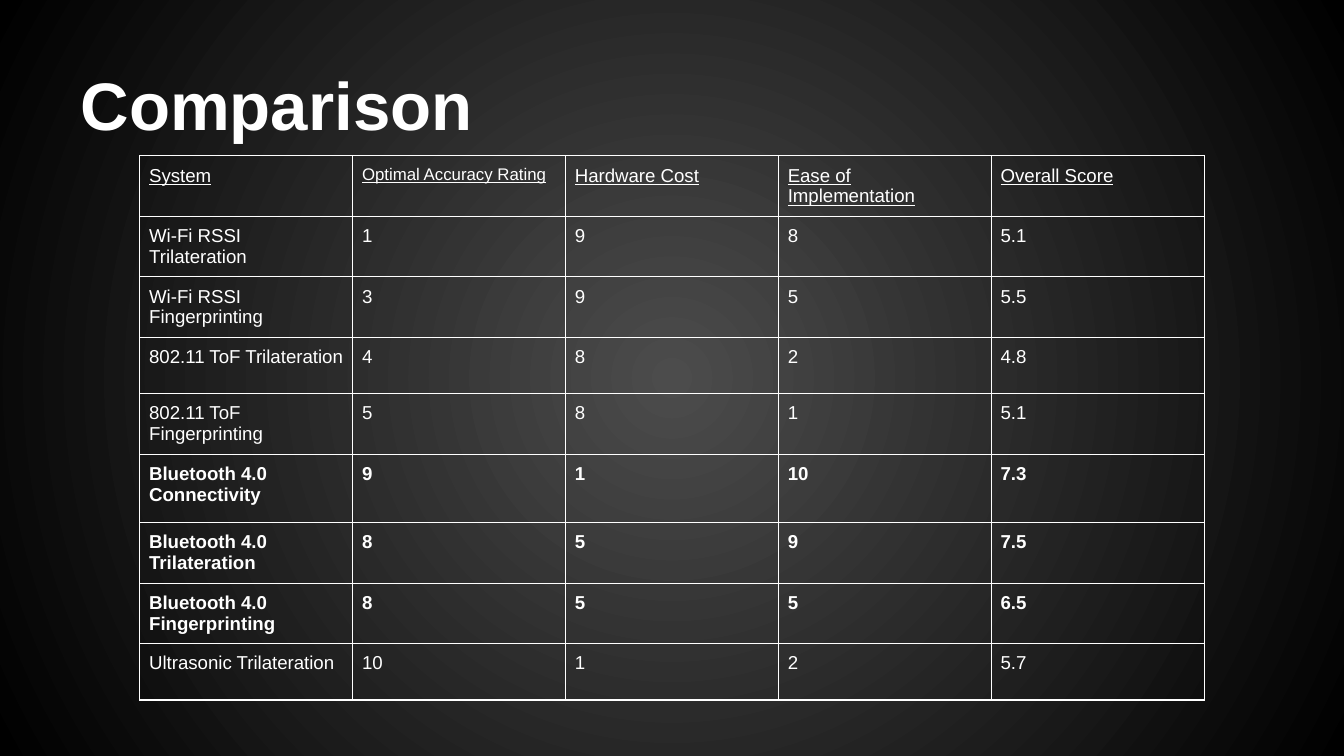
from pptx import Presentation
from pptx.dml.color import RGBColor
from pptx.enum.text import MSO_ANCHOR, MSO_AUTO_SIZE, PP_ALIGN
from pptx.oxml import parse_xml
from pptx.oxml.ns import nsdecls
from pptx.util import Inches, Pt

# Content
TITLE = "Comparison"
HEADERS = ["System", "Optimal Accuracy Rating", "Hardware Cost",
           "Ease of Implementation", "Overall Score"]
SYSTEMS = [
    ("Wi-Fi RSSI Trilateration", "1", "9", "8", "5.1"),
    ("Wi-Fi RSSI Fingerprinting", "3", "9", "5", "5.5"),
    ("802.11 ToF Trilateration", "4", "8", "2", "4.8"),
    ("802.11 ToF Fingerprinting", "5", "8", "1", "5.1"),
    ("Bluetooth 4.0 Connectivity", "9", "1", "10", "7.3"),
    ("Bluetooth 4.0 Trilateration", "8", "5", "9", "7.5"),
    ("Bluetooth 4.0\nFingerprinting", "8", "5", "5", "6.5"),
    ("Ultrasonic Trilateration", "10", "1", "2", "5.7"),
]

# Layout and style: a 16:9 page
PAGE_WIDTH = 10
PAGE_HEIGHT = PAGE_WIDTH * 9 / 16
LEFT, TOP, TABLE_WIDTH, ROW_HEIGHT = 1.04, 1.16, 7.92, 0.42
COLUMN_WIDTH = TABLE_WIDTH / len(HEADERS)
TALL_ROW, TALL_HEIGHT = 5, 0.51
WHITE, GREY, BLACK = "FFFFFF", "4C4C4C", "000000"
BORDER_WIDTH = Pt(0.75)


def colour(value):
    return RGBColor.from_string(value)


def set_all(target, values):
    for name, value in values.items():
        setattr(target, name, value)


def margins(size):
    return {f"margin_{side}": Inches(size)
            for side in ("left", "top", "right", "bottom")}


def format_text(frame, size, **styles):
    for para in frame.paragraphs:
        para.alignment = PP_ALIGN.LEFT
        for span in para.runs:
            set_all(span.font, {"name": "Arial", "size": Pt(size), **styles})
            span.font.color.rgb = colour(WHITE)


def add_borders(cell):
    properties = cell._tc.get_or_add_tcPr()
    for index, side in enumerate("LRTB"):
        properties.insert(index, parse_xml(
            f'<a:ln{side} {nsdecls("a")} w="{BORDER_WIDTH}"><a:solidFill>'
            f'<a:srgbClr val="{WHITE}"/></a:solidFill></a:ln{side}>'))


def paint_background(page):
    fill = page.background.fill
    fill.gradient()
    for stop, value in zip(fill.gradient_stops, (GREY, BLACK)):
        stop.color.rgb = colour(value)
    # Turn the linear gradient into a centred circle
    linear = page.background._cSld.find(".//{*}lin")
    linear.getparent().replace(linear, parse_xml(
        f'<a:path {nsdecls("a")} path="circle">'
        '<a:fillToRect l="50000" t="50000" r="50000" b="50000"/></a:path>'))


def add_title(page):
    title = page.shapes.title
    set_all(title, {"left": Inches(0.5), "top": Inches(0.23),
                    "width": Inches(9), "height": Inches(0.94)})
    frame = title.text_frame
    frame.text = TITLE
    set_all(frame, {"vertical_anchor": MSO_ANCHOR.BOTTOM, "word_wrap": True,
                    "auto_size": MSO_AUTO_SIZE.NONE, **margins(0.1)})
    format_text(frame, 36, bold=True)


def add_scores(page):
    rows = [HEADERS, *SYSTEMS]
    table = page.shapes.add_table(
        len(rows), len(HEADERS), Inches(LEFT), Inches(TOP),
        Inches(TABLE_WIDTH), Inches(ROW_HEIGHT * len(rows))).table
    set_all(table, {"first_row": False, "horz_banding": False})
    for column in table.columns:
        column.width = Inches(COLUMN_WIDTH)
    for r, values in enumerate(rows):
        table.rows[r].height = Inches(TALL_HEIGHT if r == TALL_ROW else ROW_HEIGHT)
        for c, value in enumerate(values):
            cell = table.cell(r, c)
            cell.text = value
            set_all(cell, {"vertical_anchor": MSO_ANCHOR.TOP, **margins(0.07)})
            cell.fill.background()
            add_borders(cell)
            format_text(cell.text_frame, 9 if (r, c) == (0, 1) else 10,
                        bold=values[0].startswith("Bluetooth"),
                        underline=r == 0)


def main():
    deck = Presentation()
    set_all(deck, {"slide_width": Inches(PAGE_WIDTH),
                   "slide_height": Inches(PAGE_HEIGHT)})
    page = deck.slides.add_slide(deck.slide_layouts[5])
    paint_background(page)
    add_title(page)
    add_scores(page)
    deck.save("out.pptx")


if __name__ == "__main__":
    main()
